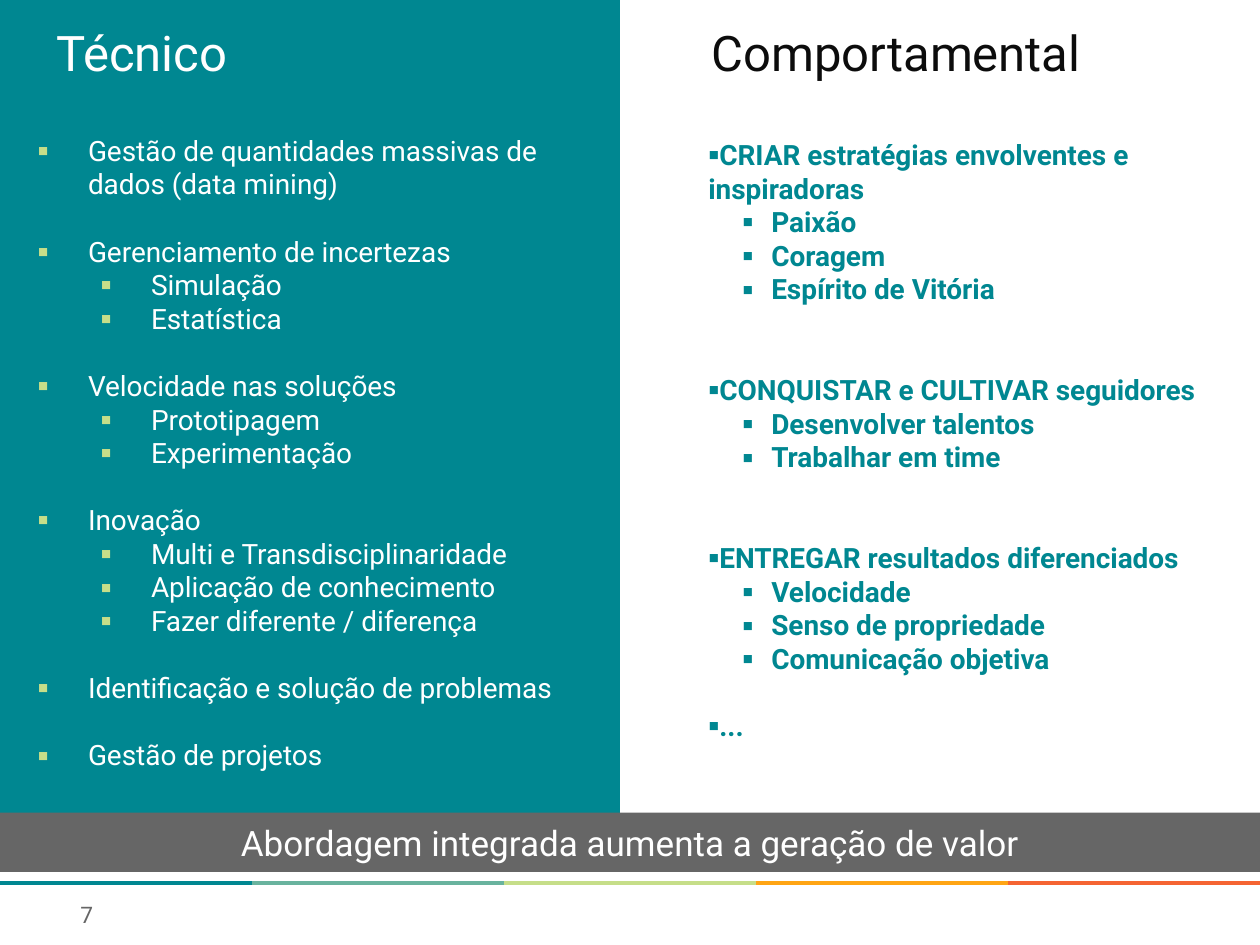
from dataclasses import dataclass

from lxml import etree
from pptx import Presentation
from pptx.dml.color import RGBColor
from pptx.enum.shapes import MSO_CONNECTOR as Connector, MSO_SHAPE as Shape
from pptx.enum.text import MSO_ANCHOR as Anchor, PP_ALIGN as Align
from pptx.oxml.ns import qn
from pptx.util import Inches, Pt


@dataclass(frozen=True)
class Theme:
    font: str = "Roboto"
    teal: str = "008791"
    lime: str = "C6DE89"
    gray: str = "666666"
    white: str = "FFFFFF"
    ink: str = "0C0C0C"
    stripes: tuple = ("008791", "69B39E", "C6DE89", "FFA514", "F56432")
    title: float = 28
    banner: float = 20
    body: float = 16
    number: float = 13
    blank_line: float = 19.2


THEME = Theme()

# Each item: level, text, blank lines above it
TECHNICAL = [
    (0, "Gestão de quantidades massivas de dados (data mining)", 0),
    (0, "Gerenciamento de incertezas", 1),
    (1, "Simulação", 0),
    (1, "Estatística", 0),
    (0, "Velocidade nas soluções", 1),
    (1, "Prototipagem", 0),
    (1, "Experimentação", 0),
    (0, "Inovação", 1),
    (1, "Multi e Transdisciplinaridade", 0),
    (1, "Aplicação de conhecimento", 0),
    (1, "Fazer diferente / diferença", 0),
    (0, "Identificação e solução de problemas", 1),
    (0, "Gestão de projetos", 1),
]
BEHAVIORAL = [
    (0, "CRIAR estratégias envolventes e inspiradoras", 0),
    (1, "Paixão", 0),
    (1, "Coragem", 0),
    (1, "Espírito de Vitória", 0),
    (0, "CONQUISTAR e CULTIVAR seguidores", 2),
    (1, "Desenvolver talentos", 0),
    (1, "Trabalhar em time", 0),
    (0, "ENTREGAR resultados diferenciados", 2),
    (1, "Velocidade", 0),
    (1, "Senso de propriedade", 0),
    (1, "Comunicação objetiva", 0),
    (0, "...", 1),
]
# Left margin and first-line indent for each level
TECHNICAL_INDENTS = [(0.4, -0.4), (0.9, -0.4)]
BEHAVIORAL_INDENTS = [(0, 0), (0.5, -0.23)]


def box_lengths(box):
    return [Inches(value) for value in box]


def add_run(paragraph, text, size, color, bold=False):
    run = paragraph.add_run()
    run.text = text
    formats = {"name": THEME.font, "size": Pt(size), "bold": bold}
    for name, value in formats.items():
        setattr(run.font, name, value)
    run.font.color.rgb = RGBColor.from_string(color)


def add_panel(slide, box, fill=None, preset=Shape.RECTANGLE):
    panel = slide.shapes.add_shape(preset, *box_lengths(box))
    panel.shadow.inherit = False
    panel.line.fill.background()
    if fill:
        panel.fill.solid()
        panel.fill.fore_color.rgb = RGBColor.from_string(fill)
    else:
        panel.fill.background()
    return panel


def add_label(slide, box, text, size, color, anchor=Anchor.TOP):
    frame = slide.shapes.add_textbox(*box_lengths(box)).text_frame
    frame.word_wrap = True
    frame.vertical_anchor = anchor
    add_run(frame.paragraphs[0], text, size, color)


def set_bullet(paragraph, color, margin, indent):
    properties = paragraph._p.get_or_add_pPr()
    properties.set("marL", str(Inches(margin)))
    properties.set("indent", str(Inches(indent)))
    bullet_color = etree.SubElement(properties, qn("a:buClr"))
    etree.SubElement(bullet_color, qn("a:srgbClr"), val=color)
    etree.SubElement(properties, qn("a:buFont"), typeface=THEME.font)
    etree.SubElement(properties, qn("a:buChar"), char="▪")


def fill_list(shape, items, indents, color, bullet_color, bold=False):
    frame = shape.text_frame
    frame.word_wrap = True
    frame.vertical_anchor = Anchor.TOP
    for index, (level, text, blank_lines) in enumerate(items):
        paragraph = frame.add_paragraph() if index else frame.paragraphs[0]
        set_bullet(paragraph, bullet_color, *indents[level])
        paragraph.level = level
        paragraph.alignment = Align.LEFT
        if blank_lines:
            paragraph.space_before = Pt(blank_lines * THEME.blank_line)
        add_run(paragraph, text, THEME.body, color, bold)


def add_footer(slide, box):
    """Draw the five-colour rule along the top of the box and the slide number."""
    left, top, width, height = box
    step = width / len(THEME.stripes)
    for index, color in enumerate(THEME.stripes):
        start = left + index * step
        stripe = slide.shapes.add_connector(
            Connector.STRAIGHT, *box_lengths((start, top, start + step, top)))
        stripe.line.color.rgb = RGBColor.from_string(color)
        stripe.line.width = Pt(2.5)
        etree.SubElement(stripe._element.spPr, qn("a:effectLst"))
    add_label(slide, (left + 0.54, top + 0.08, 0.57, 0.33), "7",
              THEME.number, THEME.gray, Anchor.MIDDLE)


def add_technical(slide, box):
    left, top, width, height = box
    add_panel(slide, box, THEME.teal)
    add_label(slide, (left + 0.35, top + 0.16, 4.41, 0.82), "Técnico",
              THEME.title, THEME.white)
    body = slide.shapes.add_textbox(
        *box_lengths((left + 0.2, top + 1.04, width - 0.27, 4.94)))
    fill_list(body, TECHNICAL, TECHNICAL_INDENTS, THEME.white, THEME.lime)


def add_behavioral(slide, box):
    left, top, width, height = box
    body = add_panel(slide, (left, top + 0.86, width, height - 0.86),
                     preset=Shape.ROUNDED_RECTANGLE)
    body.adjustments[0] = 0.04
    fill_list(body, BEHAVIORAL, BEHAVIORAL_INDENTS, THEME.teal, THEME.teal, bold=True)
    add_label(slide, (left + 0.08, top, 4.33, 0.82), "Comportamental",
              THEME.title, THEME.ink)


def add_banner(slide, box):
    banner = add_panel(slide, box, THEME.gray)
    banner.text_frame.vertical_anchor = Anchor.MIDDLE
    paragraph = banner.text_frame.paragraphs[0]
    paragraph.alignment = Align.CENTER
    add_run(paragraph, "Abordagem integrada aumenta a geração de valor",
            THEME.banner, THEME.white)


def main():
    presentation = Presentation()
    presentation.slide_width = Inches(10)
    presentation.slide_height = Inches(7.5)
    slide = presentation.slides.add_slide(presentation.slide_layouts[6])
    add_footer(slide, (0, 7.01, 10, 0.49))
    add_technical(slide, (0, -0.03, 4.92, 6.9))
    add_behavioral(slide, (5.47, 0.13, 4.57, 5.98))
    add_banner(slide, (0, 6.45, 10, 0.47))
    presentation.save("out.pptx")


if __name__ == "__main__":
    main()
